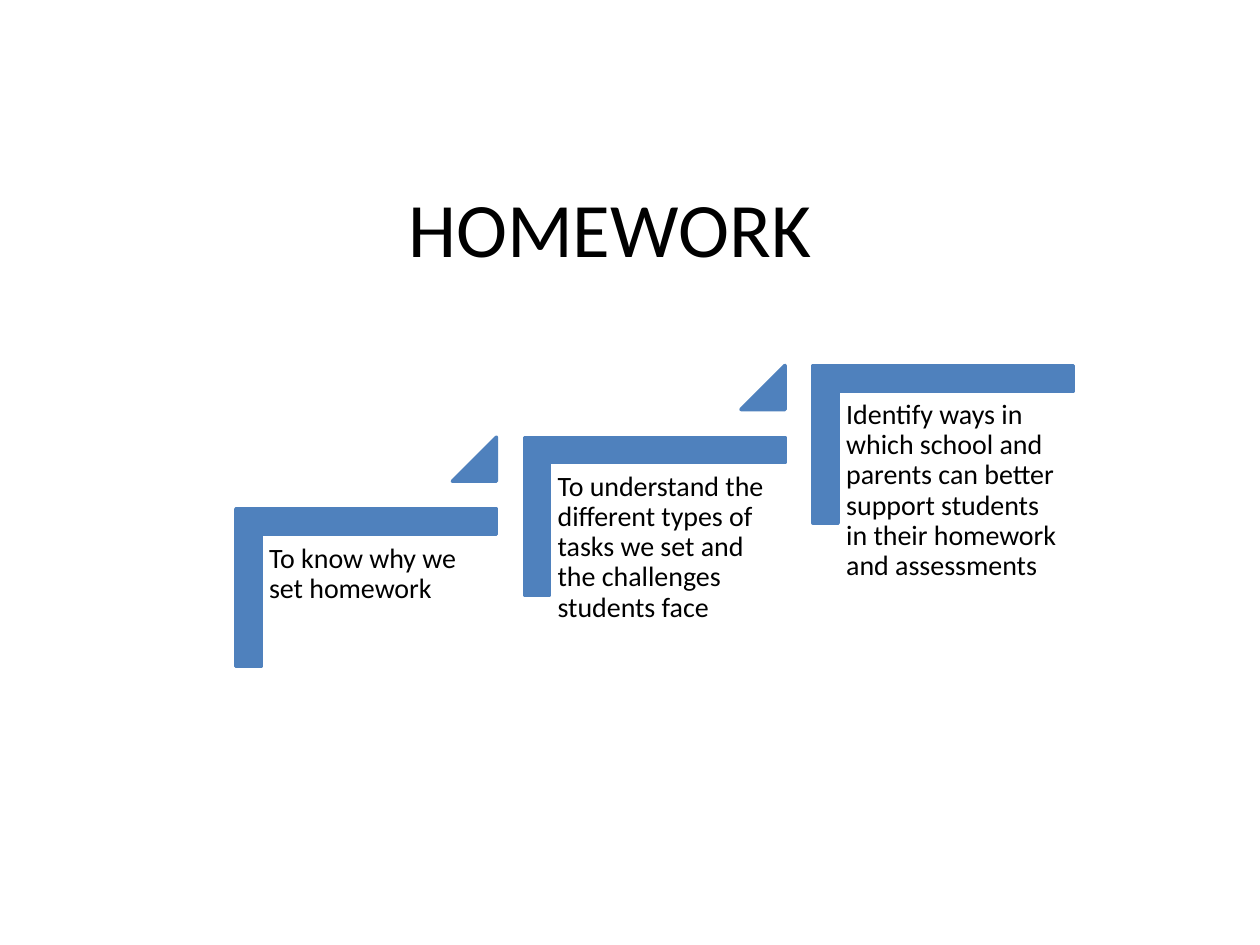
import pptx
import pptx.util
import pptx.dml.color
import pptx.enum.shapes
import pptx.enum.text

Pt = pptx.util.Pt
RGB = pptx.dml.color.RGBColor
MSO_SHAPE = pptx.enum.shapes.MSO_SHAPE
PP_ALIGN = pptx.enum.text.PP_ALIGN
MSO_ANCHOR = pptx.enum.text.MSO_ANCHOR

TITLE = "HOMEWORK"
STEPS = [
    "To know why we set homework",
    "To understand the different types of tasks we set and the challenges students face",
    "Identify ways in which school and parents can better support students "
    "in their homework and assessments",
]
COLORS = {"step": "4F81BD", "text": "000000"}
FONT = "Calibri"

# Each step moves right and up from the one before
STEP_DX, STEP_DY = 164.9, -41
CORNER = (164.2, 261.4, 90, 149)
LABEL = (149, 306, 134.6, 118)
RISER = (258.5, 249.8, 25.2, 25.2)


def add_text(s, box, text, size, inset_x, inset_y):
    tb = s.shapes.add_textbox(*map(Pt, box))
    tf = tb.text_frame
    tf.word_wrap = True
    tf.margin_left = tf.margin_right = Pt(inset_x)
    tf.margin_top = tf.margin_bottom = Pt(inset_y)
    tf.text = text
    font = tf.paragraphs[0].runs[0].font
    font.name, font.size = FONT, Pt(size)
    font.color.rgb = RGB.from_string(COLORS["text"])
    return tf


def add_step_shape(s, kind, box, adjustments):
    sp = s.shapes.add_shape(kind, *map(Pt, box))
    for i, value in enumerate(adjustments):
        sp.adjustments[i] = value
    sp.shadow.inherit = False
    sp.fill.solid()
    sp.fill.fore_color.rgb = RGB.from_string(COLORS["step"])
    sp.line.color.rgb = RGB.from_string(COLORS["step"])
    sp.line.width = Pt(2)
    return sp


def add_corner(s, box):
    """Add the "corner" preset, which MSO_SHAPE lacks, by way of a half frame."""
    sp = add_step_shape(s, MSO_SHAPE.HALF_FRAME, box, (0.161, 0.161))
    sp.rotation = 90
    sp._element.spPr.prstGeom.set("prst", "corner")


def main():
    prs = pptx.Presentation()
    prs.slide_width, prs.slide_height = Pt(720), Pt(540)
    s = prs.slides.add_slide(prs.slide_layouts[6])

    tf = add_text(s, (42.5, 71.3, 612, 115.9), TITLE, 44, 7.2, 3.6)
    tf.vertical_anchor = MSO_ANCHOR.MIDDLE
    tf.paragraphs[0].alignment = PP_ALIGN.CENTER

    for i, text in enumerate(STEPS):
        def place(box):
            x, y, w, h = box
            return x + i * STEP_DX, y + i * STEP_DY, w, h

        add_corner(s, place(CORNER))
        p = add_text(s, place(LABEL), text, 16, 4.8, 4.8).paragraphs[0]
        p.line_spacing = 0.9
        if i < len(STEPS) - 1:
            add_step_shape(s, MSO_SHAPE.ISOSCELES_TRIANGLE, place(RISER), (1,))

    prs.save("out.pptx")


if __name__ == "__main__":
    main()
